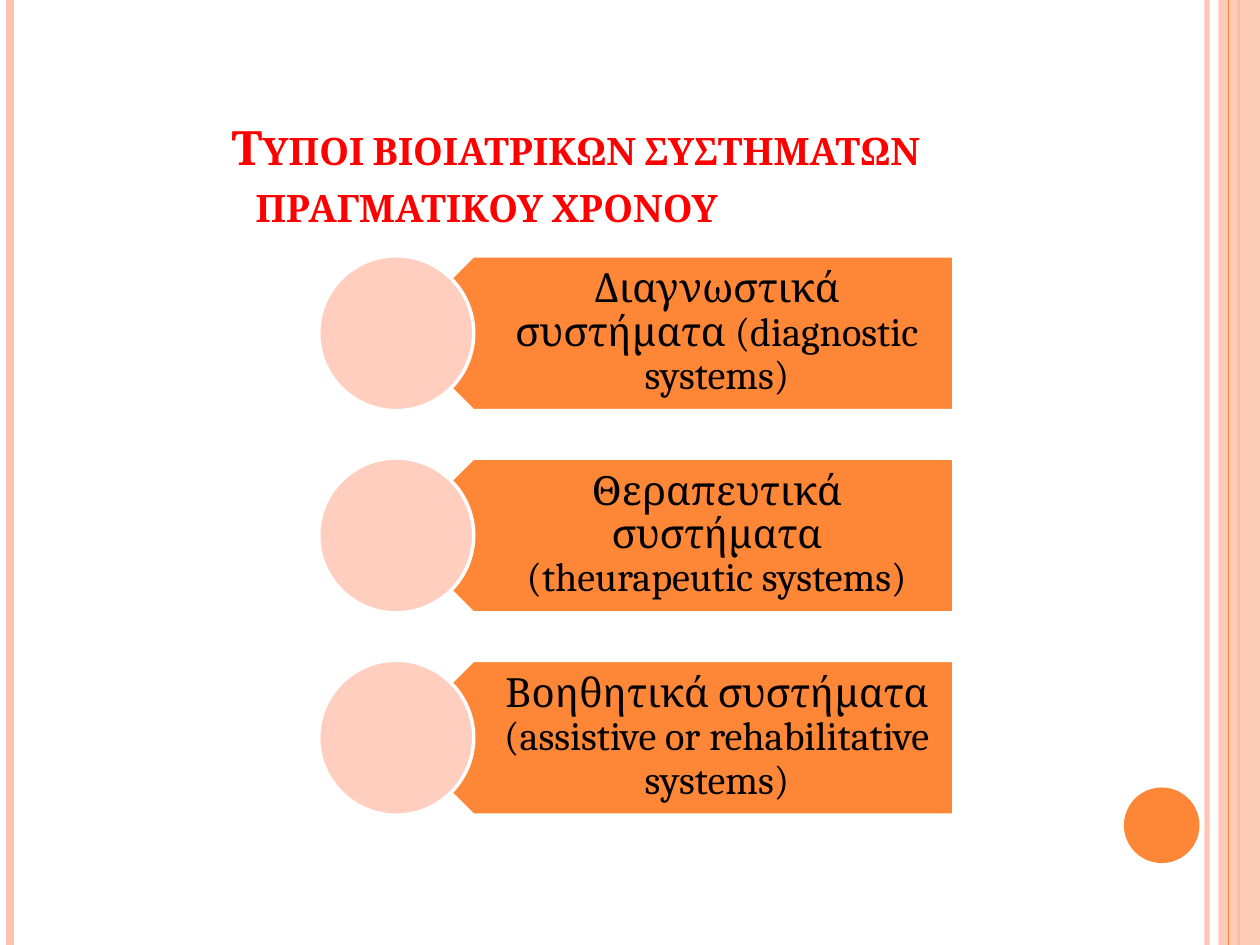
"""Build a slide with a title and three rows of arrow-shaped labels."""
from dataclasses import dataclass
from typing import Any, NamedTuple

from lxml import etree
from pptx import Presentation
from pptx import util as u
from pptx.dml.color import RGBColor
from pptx.enum import shapes, text
from pptx.oxml import ns

COLS, ROWS = 100, 75
CELL = u.Inches(10) // COLS


@dataclass(frozen=True)
class Theme:
    face: str = "Cambria"
    main: str = "FE8637"
    pale: str = "FEC3AE"
    disc: str = "FFCEBF"
    edge: str = "FFFFFF"
    head: str = "FF0000"
    ink: str = "000000"
    big: int = 27
    body: int = 23


class Box(NamedTuple):
    col: float
    row: float
    wide: float
    high: float

    def place(self) -> list[int]:
        return [round(n * CELL) for n in self]


class Rule(NamedTuple):
    col: float
    hue: str
    width: float
    alpha: int = 100


T = Theme()
BACK = [Rule(95.8, T.pale, 3, 93), Rule(0.8, T.pale, 4.5), Rule(98.3, T.main, 1.5)]
FRONT = Rule(97.5, T.main, 0.75)
TITLE = [("Τυποι βιοιατρικων συστηματων", 11.5), ("πραγματικου χρονου", 13.4)]
LABELS = [
    "Διαγνωστικά συστήματα (diagnostic systems)",
    "Θεραπευτικά συστήματα (theurapeutic systems)",
    "Βοηθητικά συστήματα (assistive or rehabilitative systems)",
]
TOP, STEP, HIGH = 20.3, 16.05, 12.3


def apply(item: Any, form: dict[str, Any]) -> None:
    for key, value in form.items():
        setattr(item, key, value)


def fade(fill: Any, hue: str, alpha: int = 100) -> None:
    fill.solid()
    fill.fore_color.rgb = RGBColor.from_string(hue)
    if alpha < 100:
        tone = fill._xPr.find(".//" + ns.qn("a:srgbClr"))
        etree.SubElement(tone, ns.qn("a:alpha"), val=str(alpha * 1000))


def rule(tree: Any, mark: Rule) -> None:
    x = round(mark.col * CELL)
    line = tree.add_connector(shapes.MSO_CONNECTOR.STRAIGHT, x, 0, x, ROWS * CELL)
    line.line.width = u.Pt(mark.width)
    fade(line.line.fill, mark.hue, mark.alpha)
    etree.SubElement(line._element.spPr, ns.qn("a:effectLst"))


def shape(tree: Any, kind: Any, box: Box, hue: str, alpha: int = 100, edge: str = "", turn: int = 0) -> None:
    item = tree.add_shape(kind, *box.place())
    apply(item, {"rotation": turn})
    item.shadow.inherit = False
    fade(item.fill, hue, alpha)
    if edge:
        fade(item.line.fill, edge)
        item.line.width = u.Pt(2)
    else:
        item.line.fill.background()


def frame(tree: Any, box: Box, form: dict[str, Any]) -> Any:
    body = tree.add_textbox(*box.place()).text_frame
    apply(body, {"word_wrap": True, **form})
    return body


def write(para: Any, words: str, size: int, hue: str, bold: bool = False) -> Any:
    run = para.add_run()
    run.text = words
    apply(run.font, {"name": T.face, "size": u.Pt(size), "bold": bold})
    run.font.color.rgb = RGBColor.from_string(hue)
    return run


def title(tree: Any) -> None:
    body = frame(tree, Box(5.9, 6.4, 81.7, 12.5), {"vertical_anchor": text.MSO_ANCHOR.BOTTOM})
    for i, (words, inset) in enumerate(TITLE):
        para = body.add_paragraph() if i else body.paragraphs[0]
        para._p.get_or_add_pPr().set("marL", str(round(inset * CELL)))
        run = write(para, words, T.big, T.head, True)
        run._r.get_or_add_rPr().set("cap", "small")


def label(tree: Any, words: str, row: float) -> None:
    group = tree.add_group_shape().shapes
    kind = shapes.MSO_SHAPE
    shape(group, kind.PENTAGON, Box(31.4, row, 44.3, HIGH), T.main, edge=T.edge, turn=180)
    body = frame(group, Box(34.5, row, 41.2, HIGH), {
        "vertical_anchor": text.MSO_ANCHOR.MIDDLE,
        "margin_left": u.Inches(0.54), "margin_right": u.Inches(0.18),
        "margin_top": u.Inches(0.1), "margin_bottom": u.Inches(0.1),
    })
    para = body.paragraphs[0]
    apply(para, {"alignment": text.PP_ALIGN.CENTER, "line_spacing": 0.9})
    write(para, words, T.body, T.ink)
    shape(group, kind.OVAL, Box(25.3, row, HIGH, HIGH), T.disc, edge=T.edge)


def main() -> None:
    deck = Presentation()
    apply(deck, {"slide_width": COLS * CELL, "slide_height": ROWS * CELL})
    tree = deck.slides.add_slide(deck.slide_layouts[6]).shapes
    for mark in BACK:
        rule(tree, mark)
    shape(tree, shapes.MSO_SHAPE.RECTANGLE, Box(96.7, 0, 3.3, ROWS), T.pale, 87)
    rule(tree, FRONT)
    shape(tree, shapes.MSO_SHAPE.OVAL, Box(89.2, 62.5, 6, 6), T.main)
    title(tree)
    for i, words in enumerate(LABELS):
        label(tree, words, TOP + i * STEP)
    deck.save("out.pptx")


if __name__ == "__main__":
    main()
